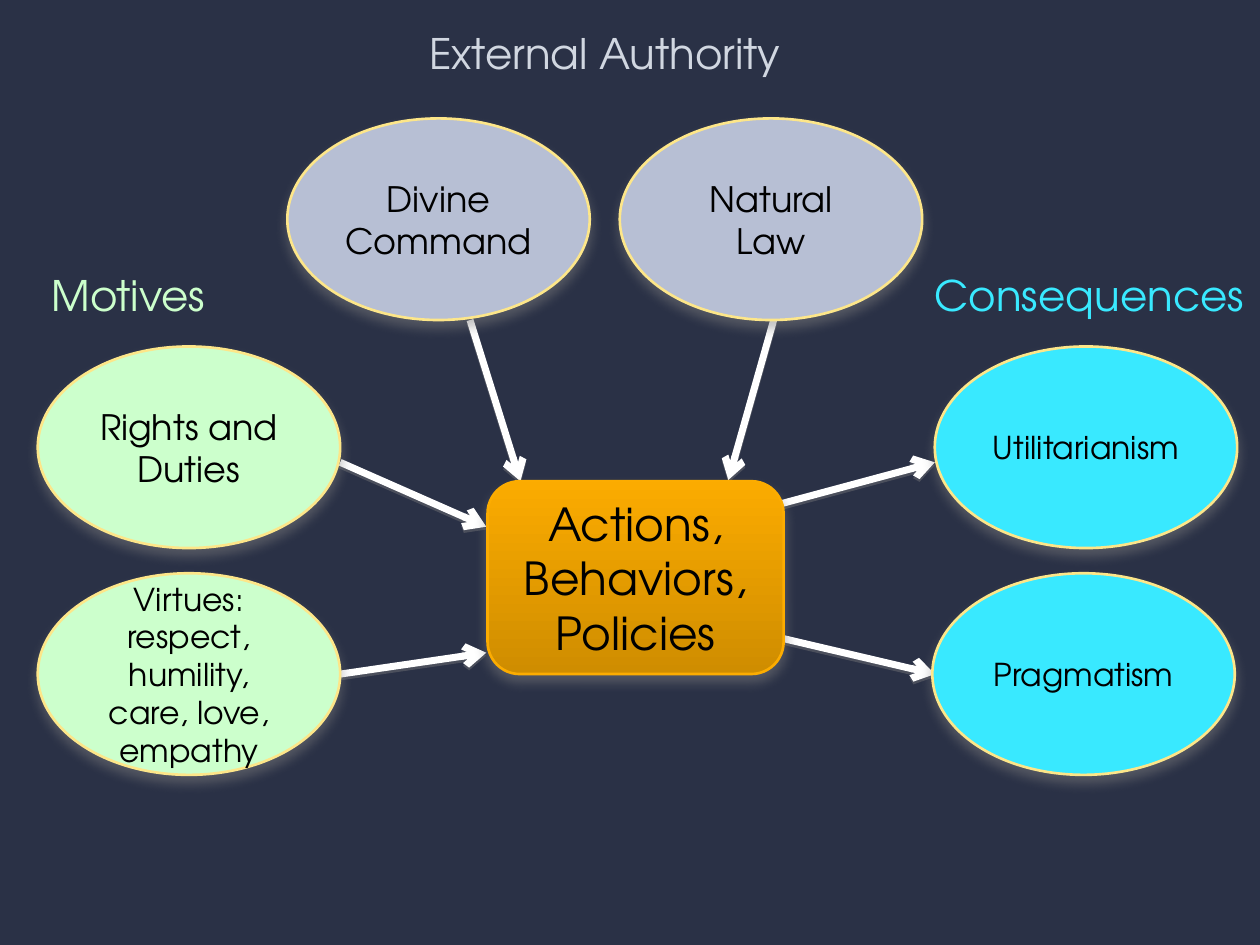
from typing import NamedTuple

from lxml.etree import SubElement
from pptx import Presentation
from pptx.dml.color import RGBColor
from pptx.enum.shapes import MSO_CONNECTOR, MSO_SHAPE
from pptx.enum.text import MSO_ANCHOR, MSO_AUTO_SIZE, PP_ALIGN
from pptx.oxml.ns import qn
from pptx.util import Pt

FONT = "TeX Gyre Adventor"
GREY, GREEN, CYAN = "B7BFD4", "CCFFCC", "39E9FF"
OVAL_WIDTH, OVAL_HEIGHT = 172.8, 115.2
TOP_ROW, MIDDLE_ROW, BOTTOM_ROW = 67.7, 198, 327.6


class Oval(NamedTuple):
    text: str
    left: float
    top: float
    fill: str
    size: float


class Arrow(NamedTuple):
    start: tuple[float, float]
    end: tuple[float, float]


class Heading(NamedTuple):
    text: str
    left: float
    top: float
    width: float
    color: str
    align: PP_ALIGN


OVALS = [
    Oval("Divine Command", 164.2, TOP_ROW, GREY, 20),
    Oval("Natural Law", 354.2, TOP_ROW, GREY, 20),
    Oval("Rights and Duties", 21.6, MIDDLE_ROW, GREEN, 20),
    Oval("Virtues:\nrespect, humility, care, love, empathy", 21.6, BOTTOM_ROW, GREEN, 18),
    Oval("Utilitarianism", 534.2, MIDDLE_ROW, CYAN, 18),
    Oval("Pragmatism", 532.8, BOTTOM_ROW, CYAN, 18),
]
ARROWS = [
    Arrow((442.1, 363.6), (534.2, 385.2)),
    Arrow((440.6, 289.4), (534.2, 264.2)),
    Arrow((194.4, 385.2), (277.9, 373)),
    Arrow((194.4, 264.2), (277.9, 301)),
    Arrow((442.1, 182.9), (416.2, 274.3)),
    Arrow((268.6, 182.9), (297.4, 275)),
]
TITLE = Heading("External Authority", 236.2, 12.2, 218.9, "D1D7E1", PP_ALIGN.CENTER)
SIDE_HEADINGS = [
    Heading("Motives", 22.3, 150.5, 104.4, GREEN, PP_ALIGN.LEFT),
    Heading("Consequences", 527, 150.5, 193, CYAN, PP_ALIGN.LEFT),
]


def rgb(color: str) -> RGBColor:
    return RGBColor.from_string(color)


def add_shadow(item, blur: float, distance: float, opacity: int) -> None:
    """Add a grey shadow that falls straight down."""
    effects = SubElement(item._element.spPr, qn("a:effectLst"))
    shadow = SubElement(effects, qn("a:outerShdw"), blurRad=str(Pt(blur)),
                        dist=str(Pt(distance)), dir="5400000", rotWithShape="0")
    tint = SubElement(shadow, qn("a:srgbClr"), val="808080")
    SubElement(tint, qn("a:alpha"), val=str(opacity * 1000))


def write_text(box, text: str, size: float, color: str, align: PP_ALIGN) -> None:
    frame = box.text_frame
    frame.text = text
    for para in frame.paragraphs:
        para.alignment = align
        for span in para.runs:
            span.font.name = FONT
            span.font.size = Pt(size)
            span.font.color.rgb = rgb(color)


def add_node(page, kind: MSO_SHAPE, left: float, top: float, width: float,
             height: float, text: str, size: float, border: str):
    node = page.shapes.add_shape(kind, Pt(left), Pt(top), Pt(width), Pt(height))
    node.line.color.rgb = rgb(border)
    node.line.width = Pt(1.5)
    node.text_frame.word_wrap = True
    node.text_frame.vertical_anchor = MSO_ANCHOR.MIDDLE
    write_text(node, text, size, "000000", PP_ALIGN.CENTER)
    return node


def add_oval(page, oval: Oval) -> None:
    node = add_node(page, MSO_SHAPE.OVAL, oval.left, oval.top, OVAL_WIDTH,
                    OVAL_HEIGHT, oval.text, oval.size, "FDE689")
    node.fill.solid()
    node.fill.fore_color.rgb = rgb(oval.fill)
    add_shadow(node, 7, 4, 50)


def add_center(page) -> None:
    node = add_node(page, MSO_SHAPE.ROUNDED_RECTANGLE, 278.6, 275, 169.2, 110.2,
                    "Actions,\nBehaviors,\nPolicies", 26, "FCAC00")
    node.fill.gradient()
    node.fill.gradient_angle = 90
    for stop, color in zip(node.fill.gradient_stops, ("CF8D00", "FBAB00")):
        stop.color.rgb = rgb(color)
    add_shadow(node, 7, 4, 50)


def add_arrow(page, arrow: Arrow) -> None:
    points = [Pt(value) for value in arrow.start + arrow.end]
    connector = page.shapes.add_connector(MSO_CONNECTOR.STRAIGHT, *points)
    connector.line.color.rgb = rgb("FFFFFF")
    connector.line.width = Pt(4)
    SubElement(connector._element.spPr.find(qn("a:ln")), qn("a:tailEnd"), type="arrow")
    add_shadow(connector, 0, 1.6, 38)


def format_heading(box, heading: Heading) -> None:
    box.left, box.top = Pt(heading.left), Pt(heading.top)
    box.width, box.height = Pt(heading.width), Pt(36)
    write_text(box, heading.text, 24, heading.color, heading.align)
    box.text_frame.vertical_anchor = MSO_ANCHOR.TOP
    box.text_frame.word_wrap = False
    box.text_frame.auto_size = MSO_AUTO_SIZE.SHAPE_TO_FIT_TEXT


def main() -> None:
    deck = Presentation()
    deck.slide_width, deck.slide_height = Pt(720), Pt(540)
    page = deck.slides.add_slide(deck.slide_layouts[5])
    page.background.fill.solid()
    page.background.fill.fore_color.rgb = rgb("2A3146")

    # Arrows lie behind the nodes they join
    for arrow in ARROWS:
        add_arrow(page, arrow)
    add_center(page)
    for oval in OVALS:
        add_oval(page, oval)

    # Title and side headings
    format_heading(page.shapes.title, TITLE)
    for heading in SIDE_HEADINGS:
        format_heading(page.shapes.add_textbox(0, 0, 0, 0), heading)

    deck.save("out.pptx")


if __name__ == "__main__":
    main()
